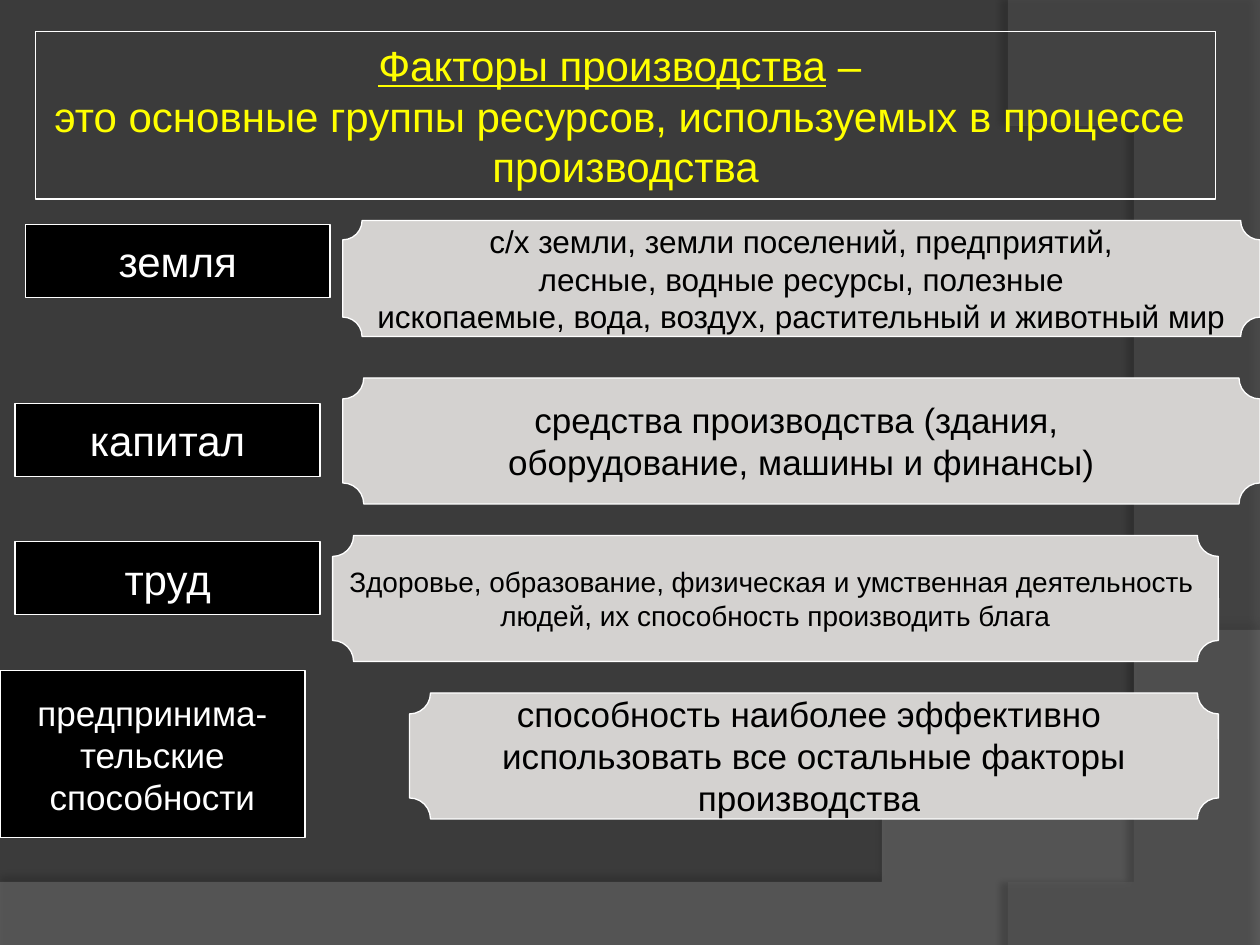
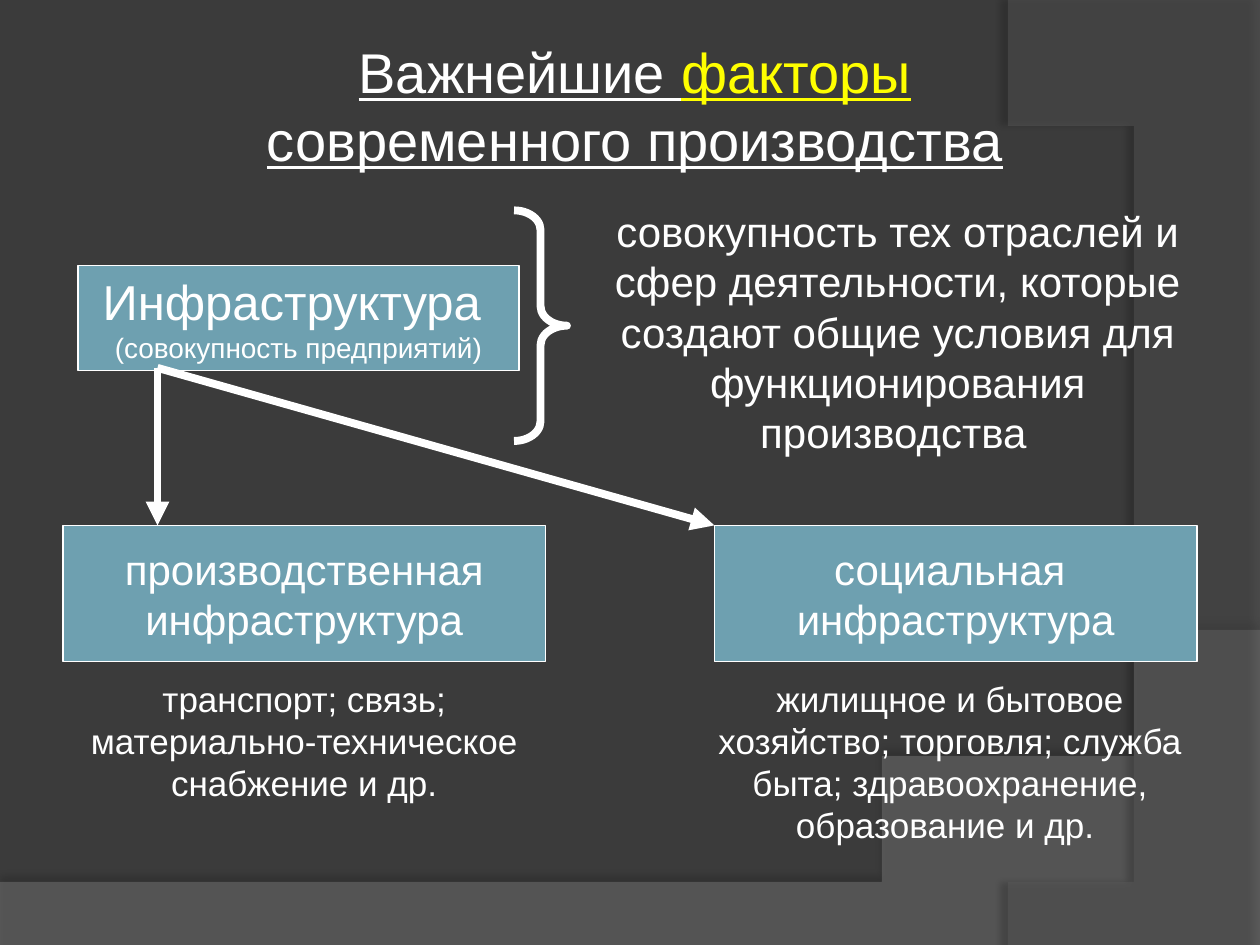
from dataclasses import dataclass
from typing import Optional

from lxml.etree import SubElement
from pptx import Presentation
from pptx.dml.color import RGBColor
from pptx.enum.shapes import MSO_CONNECTOR, MSO_SHAPE
from pptx.enum.text import MSO_ANCHOR, MSO_AUTO_SIZE, PP_ALIGN
from pptx.oxml.ns import qn
from pptx.util import Inches, Pt

FONT = "Arial"
BACK = RGBColor(0x3B, 0x3B, 0x3B)
WHITE = RGBColor(0xFF, 0xFF, 0xFF)
BLACK = RGBColor(0, 0, 0)
YELLOW = RGBColor(0xFF, 0xFF, 0)
PALE = RGBColor(0xD4, 0xD2, 0xD0)
TEAL = RGBColor(0x6E, 0xA0, 0xB0)
LIGHT = RGBColor(0x7F, 0x7F, 0x7F)
GREY = RGBColor(0x5E, 0x5E, 0x5E)


@dataclass
class Run:
    text: str
    size: Optional[float] = None
    color: Optional[RGBColor] = None
    under: bool = False


@dataclass
class Box:
    left: float
    top: float
    width: float
    height: float
    lines: list
    size: float
    fill: Optional[RGBColor] = None
    color: RGBColor = WHITE
    kind: MSO_SHAPE = MSO_SHAPE.RECTANGLE


@dataclass
class Band:
    start: tuple
    curve: tuple  # two controls and the end point
    rest: list
    fill: RGBColor
    alpha: int
    shade: int
    dist: float
    angle: int


# Text
def write(frame, lines: list, *, size: float, color: RGBColor = WHITE,
          wrap: bool = False, anchor=MSO_ANCHOR.MIDDLE, before: float = 0) -> None:
    """Fill a frame; a line is a string or a list of runs."""
    frame.word_wrap = wrap
    frame.auto_size = MSO_AUTO_SIZE.NONE
    frame.vertical_anchor = anchor
    for i, line in enumerate(lines):
        para = frame.paragraphs[0] if i == 0 else frame.add_paragraph()
        para.alignment = PP_ALIGN.CENTER
        para.space_before = Pt(before)
        for part in [Run(line)] if isinstance(line, str) else line:
            run = para.add_run()
            run.text = part.text
            font = run.font
            font.name = FONT
            font.size = Pt(part.size or size)
            font.color.rgb = part.color or color
            font.underline = part.under


# Shapes
def place(shape, left: float, top: float, width: float, height: float) -> None:
    shape.left, shape.top = Inches(left), Inches(top)
    shape.width, shape.height = Inches(width), Inches(height)


def edge(shape, width: float = 0.75) -> None:
    shape.line.color.rgb = WHITE
    shape.line.width = Pt(width)


def add_box(slide, box: Box) -> None:
    shape = slide.shapes.add_shape(
        box.kind, Inches(box.left), Inches(box.top),
        Inches(box.width), Inches(box.height))
    shape.shadow.inherit = False
    shape.fill.solid()
    shape.fill.fore_color.rgb = box.fill
    edge(shape)
    write(shape.text_frame, box.lines, size=box.size, color=box.color)


def add_note(slide, box: Box) -> None:
    shape = slide.shapes.add_textbox(
        Inches(box.left), Inches(box.top), Inches(box.width), Inches(box.height))
    write(shape.text_frame, box.lines, size=box.size, color=box.color,
          wrap=True, anchor=MSO_ANCHOR.TOP, before=box.size / 8)


def add_arrow(slide, start: tuple, end: tuple) -> None:
    line = slide.shapes.add_connector(
        MSO_CONNECTOR.STRAIGHT, *(Inches(n) for n in start + end))
    edge(line, 4.5)
    props = line.element.spPr
    SubElement(props.find(qn("a:ln")), qn("a:tailEnd"), type="triangle")
    SubElement(props, qn("a:effectLst"))


# Shared backdrop
def bend(start: tuple, curve: tuple, steps: int = 60) -> list:
    """Points along a cubic curve."""
    points = []
    for i in range(1, steps + 1):
        t = i / steps
        parts = ((1 - t) ** 3, 3 * t * (1 - t) ** 2, 3 * t * t * (1 - t), t ** 3)
        points.append(tuple(
            sum(k * p[axis] for k, p in zip(parts, (start, *curve)))
            for axis in (0, 1)))
    return points


def add_band(slide, layout, band: Band, order: int) -> None:
    form = slide.shapes.build_freeform(*band.start, scale=Inches(1))
    form.add_line_segments(bend(band.start, band.curve) + band.rest, close=True)
    shape = form.convert_to_shape()
    shape.line.fill.background()
    shape.fill.solid()
    shape.fill.fore_color.rgb = band.fill
    shape.shadow.inherit = False
    props = shape.element.spPr
    tint = props.find(qn("a:solidFill"))[0]
    SubElement(tint, qn("a:alpha"), val=str(band.alpha * 1000))
    glow = SubElement(
        props.find(qn("a:effectLst")), qn("a:outerShdw"), blurRad=str(Pt(4)),
        dist=str(Pt(band.dist)), dir=str(band.angle * 60000),
        algn="ctr", rotWithShape="0")
    tone = SubElement(glow, qn("a:srgbClr"), val=str(BLACK))
    SubElement(tone, qn("a:alpha"), val=str(band.shade * 1000))
    # Move to the layout, behind its placeholders
    layout.shapes.element.insert(2 + order, shape.element)


BANDS = [
    Band((10, 5.2), ((5.59, 7.29), (3.91, 7.19), (0, 7.05)),
         [(0, 7.51), (10, 7.51)], LIGHT, 45, 35, 3.5, 270),
    Band((8.21, 7.5), ((9.35, 6.19), (10.18, 3), (8, 0)),
         [(10, 0.02), (10, 7.5)], GREY, 40, 45, 4, 180),
]

# Slide 1: factors and what they cover
LABELS = [
    Box(0.2, 1.78, 2.42, 0.58, ["земля"], 24, BLACK),
    Box(0.12, 3.2, 2.42, 0.58, ["капитал"], 24, BLACK),
    Box(0.12, 4.3, 2.42, 0.58, ["труд"], 24, BLACK),
    Box(0, 5.32, 2.42, 1.33,
        ["предпринима-", "тельские", "способности"], 20, BLACK),
]
PLAQUE = dict(fill=PALE, color=BLACK, kind=MSO_SHAPE.PLAQUE)
PLAQUES = [
    Box(2.72, 1.75, 7.28, 0.92,
        ["с/х земли, земли поселений, предприятий,",
         "лесные, водные ресурсы, полезные",
         "ископаемые, вода, воздух, растительный и животный мир"], 18, **PLAQUE),
    Box(2.72, 3, 7.28, 1,
        ["средства производства (здания, ",
         "оборудование, машины и финансы)"], 20, **PLAQUE),
    Box(2.64, 4.25, 7.03, 1,
        ["Здоровье, образование, физическая и умственная деятельность ",
         "людей, их способность производить блага"], 16, **PLAQUE),
    Box(3.25, 5.5, 6.42, 1,
        ["способность наиболее эффективно ",
         "использовать все остальные факторы", "производства "], 20, **PLAQUE),
]

# Slide 2: infrastructure and its two kinds
BLOCKS = [
    Box(0.62, 2.11, 3.5, 0.83,
        ["Инфраструктура ", [Run("(совокупность предприятий)", 16)]], 28, TEAL),
    Box(0.5, 4.17, 3.83, 1.08, ["производственная", "инфраструктура"], 24, TEAL),
    Box(5.67, 4.17, 3.83, 1.08, ["социальная ", "инфраструктура"], 24, TEAL),
]
NOTES = [
    Box(4.5, 1.58, 5.25, 2.1,
        [[Run("совокупность тех отраслей и сфер деятельности, которые создают "
              "общие условия для функционирования производства"),
          Run(" ", 18)]], 24),
    Box(0.5, 5.33, 3.83, 1.43,
        ["транспорт; связь; материально-техническое снабжение и др."], 20),
    Box(5.58, 5.33, 3.92, 1.77,
        ["жилищное и бытовое хозяйство; торговля; служба быта; "
         "здравоохранение, образование и др. "], 20),
]


def draw_factors(slide) -> None:
    title = slide.shapes.title
    place(title, 0.28, 0.25, 9.37, 1.33)
    edge(title)
    write(title.text_frame,
          [[Run("Факторы производства", under=True), Run(" – ")],
           "это основные группы ресурсов, используемых в процессе ",
           "производства"], size=24, color=YELLOW)
    for box in LABELS + PLAQUES:
        add_box(slide, box)


def draw_infra(slide) -> None:
    title = slide.shapes.title
    place(title, 1.33, 0.25, 7.42, 1.18)
    write(title.text_frame,
          [[Run("Важнейшие ", under=True),
            Run("факторы", color=YELLOW, under=True),
            Run(" современного производства", under=True)]],
          size=32, wrap=True, anchor=MSO_ANCHOR.TOP, before=4)
    for box in BLOCKS:
        add_box(slide, box)
    for note in NOTES:
        add_note(slide, note)
    brace = slide.shapes.add_shape(
        MSO_SHAPE.RIGHT_BRACE, Inches(4.08), Inches(1.67), Inches(0.42), Inches(1.83))
    brace.adjustments[0] = 0.37
    brace.shadow.inherit = False
    brace.fill.background()
    edge(brace, 4.5)
    for end in ((1.25, 4.17), (5.67, 4.17)):
        add_arrow(slide, (1.25, 2.92), end)


def main() -> None:
    deck = Presentation()
    deck.slide_width, deck.slide_height = Inches(10), Inches(7.5)
    layout = deck.slide_layouts[5]
    layout.background.fill.solid()
    layout.background.fill.fore_color.rgb = BACK
    first, second = (deck.slides.add_slide(layout) for _ in range(2))
    for order, band in enumerate(BANDS):
        add_band(first, layout, band, order)
    draw_factors(first)
    draw_infra(second)
    deck.save("out.pptx")


if __name__ == "__main__":
    main()
